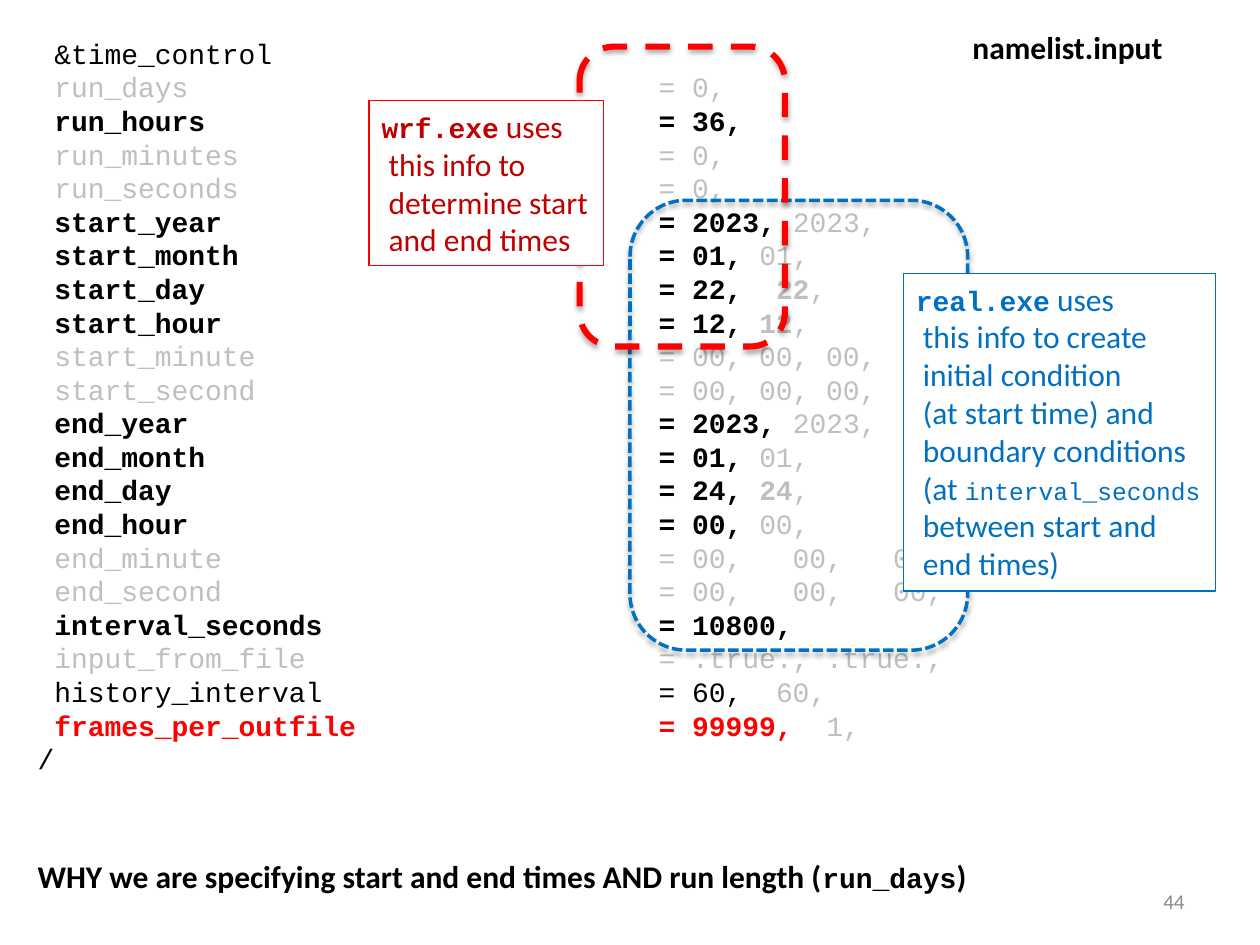
from lxml.etree import SubElement
from pptx import Presentation
from pptx.dml.color import RGBColor
from pptx.enum.dml import MSO_LINE
from pptx.enum.shapes import MSO_SHAPE
from pptx.enum.text import MSO_ANCHOR, PP_ALIGN
from pptx.oxml.ns import qn
from pptx.util import Inches, Pt

COLORS = {"black": "000000", "faded": "BFBFBF", "red": "FF0000", "dark_red": "C00000",
          "blue": "0070C0", "white": "FFFFFF", "number": "8C8C8C"}
SANS, MONO = "Calibri", "Courier New"

PLAIN = (MONO, 16, "black", False)
STRONG = (MONO, 16, "black", True)
FADED = (MONO, 16, "faded", False)
FADED_STRONG = (MONO, 16, "faded", True)
ALERT = (MONO, 16, "red", True)
HEADING = (SANS, 18, "black", True)
PAGE_NUMBER = (SANS, 12, "number", False)

NAMELIST = [
    [(" &time_control", PLAIN)],
    [(" run_days\t= 0,", FADED)],
    [(" run_hours\t= 36,", STRONG)],
    [(" run_minutes\t= 0,", FADED)],
    [(" run_seconds\t= 0,", FADED)],
    [(" start_year\t= 2023, ", STRONG), ("2023,", FADED)],
    [(" start_month\t= 01, ", STRONG), ("01,", FADED)],
    [(" start_day\t= 22,  ", STRONG), ("22", FADED_STRONG), (",", FADED)],
    [(" start_hour\t= 12, ", STRONG), ("12", FADED_STRONG), (",", FADED)],
    [(" start_minute\t= 00, 00, 00,", FADED)],
    [(" start_second\t= 00, 00, 00,", FADED)],
    [(" end_year\t= 2023, ", STRONG), ("2023,", FADED)],
    [(" end_month\t= 01, ", STRONG), ("01,", FADED)],
    [(" end_day\t= 24, ", STRONG), ("24", FADED_STRONG), (",", FADED)],
    [(" end_hour\t= 00, ", STRONG), ("00,", FADED)],
    [(" end_minute\t= 00,   00,   00,", FADED)],
    [(" end_second\t= 00,   00,   00,", FADED)],
    [(" interval_seconds\t= 10800,", STRONG)],
    [(" input_from_file\t= .true., .true.,", FADED)],
    [(" history_interval\t= 60,  ", PLAIN), ("60,", FADED)],
    [(" frames_per_outfile\t= 99999,  ", ALERT), ("1,", FADED)],
    [("/", PLAIN)],
]


def color(name):
    """Return the named colour."""
    return RGBColor.from_string(COLORS[name])


def write_lines(frame, lines, align=PP_ALIGN.LEFT):
    """Fill a text frame with one paragraph per line of styled spans."""
    for index, line in enumerate(lines):
        para = frame.paragraphs[0] if index == 0 else frame.add_paragraph()
        para.alignment = align
        for text, (font_name, size, color_name, bold) in line:
            span = para.add_run()
            span.text = text
            span.font.name = font_name
            span.font.size = Pt(size)
            span.font.bold = bold
            span.font.color.rgb = color(color_name)


def add_text(page, box, lines, align=PP_ALIGN.LEFT, anchor=MSO_ANCHOR.TOP, wrap=False):
    """Add a text box with styled lines."""
    frame = page.shapes.add_textbox(*map(Inches, box)).text_frame
    frame.word_wrap = wrap
    frame.vertical_anchor = anchor
    write_lines(frame, lines, align)
    return frame


def add_namelist(page, box, value_offset):
    """Add the settings listing with its values lined up on a tab stop."""
    frame = add_text(page, box, NAMELIST, wrap=True)
    for para in frame.paragraphs:
        stops = SubElement(para._p.get_or_add_pPr(), qn("a:tabLst"))
        SubElement(stops, qn("a:tab"), pos=str(Inches(value_offset)), algn="l")


def add_frame(page, box, color_name, width, dash):
    """Add a dashed rounded outline with a soft shadow below it."""
    outline = page.shapes.add_shape(MSO_SHAPE.ROUNDED_RECTANGLE, *map(Inches, box))
    outline.fill.background()
    outline.line.color.rgb = color(color_name)
    outline.line.width = Pt(width)
    outline.line.dash_style = dash
    outline.shadow.inherit = False
    effects = outline._element.spPr.find(qn("a:effectLst"))
    shadow = SubElement(effects, qn("a:outerShdw"), blurRad=str(Pt(3.1)), dist=str(Pt(1.8)),
                        dir="5400000", rotWithShape="0")
    tint = SubElement(shadow, qn("a:srgbClr"), val=COLORS["black"])
    SubElement(tint, qn("a:alpha"), val="35000")


def add_callout(page, box, line_color, lines):
    """Add a white outlined note."""
    note = page.shapes.add_shape(MSO_SHAPE.RECTANGLE, *map(Inches, box))
    note.shadow.inherit = False
    note.fill.solid()
    note.fill.fore_color.rgb = color("white")
    note.line.color.rgb = color(line_color)
    note.line.width = Pt(0.75)
    note.text_frame.word_wrap = False
    note.text_frame.vertical_anchor = MSO_ANCHOR.TOP
    write_lines(note.text_frame, lines)


def program_note(program, color_name, texts):
    """Return note lines that open with a program name."""
    body = (SANS, 18, color_name, False)
    opening = [(program, (MONO, 16, color_name, True)), (" uses", body)]
    return [opening] + [[(text, body)] for text in texts]


def main():
    """Build and save the slide."""
    deck = Presentation()
    deck.slide_width, deck.slide_height = Inches(10), Inches(7.5)
    page = deck.slides.add_slide(deck.slide_layouts[6])

    add_namelist(page, (0.2, 0.24, 7.47, 6.13), 4.93)
    add_text(page, (7.62, 0.17, 1.73, 0.4), [[("namelist.input", HEADING)]])
    question = "WHY we are specifying start and end times AND run length ("
    add_text(page, (0.2, 6.75, 7.77, 0.4),
             [[(question, HEADING), ("run_days", STRONG), (")", HEADING)]])
    add_text(page, (7.17, 6.95, 2.33, 0.4), [[("44", PAGE_NUMBER)]],
             PP_ALIGN.RIGHT, MSO_ANCHOR.MIDDLE, True)

    real_lines = program_note("real.exe", "blue", [
        " this info to create", " initial condition", " (at start time) and",
        " boundary conditions", " (at ", " between start and", " end times)"])
    real_lines[5].append(("interval_seconds", (MONO, 14, "blue", False)))
    add_frame(page, (5, 1.59, 2.68, 3.57), "blue", 2, MSO_LINE.SQUARE_DOT)
    add_callout(page, (7.17, 2.17, 2.48, 2.52), "blue", real_lines)

    wrf_lines = program_note("wrf.exe", "dark_red", [
        " this info to", " determine start", " and end times"])
    add_frame(page, (4.6, 0.37, 1.63, 2.38), "red", 3.5, MSO_LINE.DASH)
    add_callout(page, (2.93, 0.8, 1.86, 1.31), "red", wrf_lines)

    deck.save("out.pptx")


if __name__ == "__main__":
    main()
